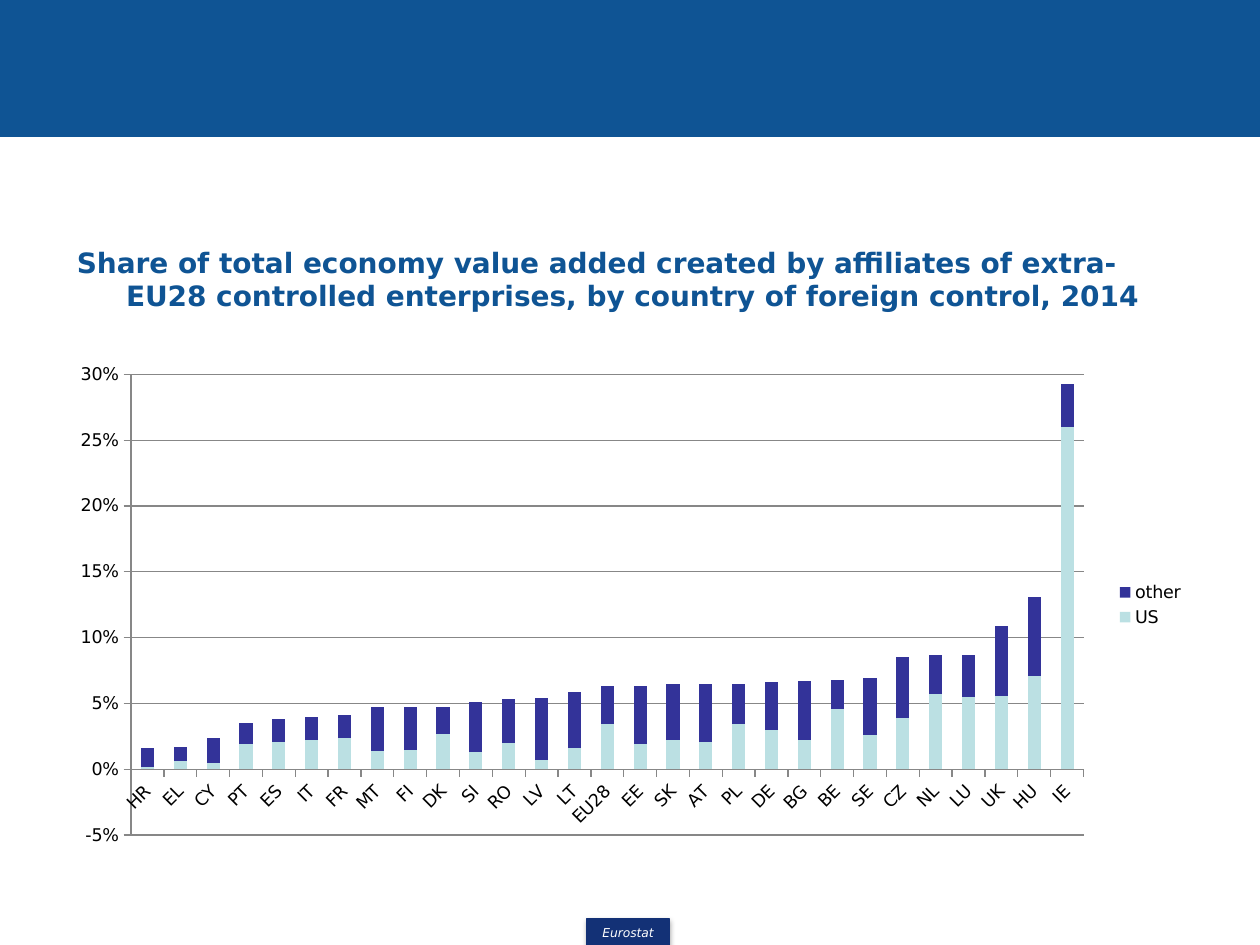
from lxml.etree import SubElement
from pptx import Presentation
from pptx.chart.data import CategoryChartData
from pptx.dml.color import RGBColor
from pptx.enum.chart import XL_CHART_TYPE, XL_LEGEND_POSITION, XL_TICK_MARK
from pptx.enum.shapes import MSO_SHAPE
from pptx.enum.text import MSO_ANCHOR, MSO_AUTO_SIZE, PP_ALIGN
from pptx.oxml import parse_xml
from pptx.oxml.ns import nsdecls, qn
from pptx.util import Inches, Pt

BLUE = RGBColor(0x0F, 0x54, 0x94)
NAVY = RGBColor(0x13, 0x31, 0x76)
PALE = RGBColor(0xBB, 0xE0, 0xE3)
INDIGO = RGBColor(0x33, 0x33, 0x99)
GREY = RGBColor(0x87, 0x87, 0x87)
BLACK = RGBColor(0, 0, 0)
WHITE = RGBColor(0xFF, 0xFF, 0xFF)

TITLE = ("Share of total economy value added created by affiliates of extra-EU28 "
         "controlled enterprises, by country of foreign control, 2014")
# Country: (share of US affiliates, share of other extra-EU28 affiliates), in percent
SHARES = {
    "HR": (0.2, 1.4), "EL": (0.6, 1.1), "CY": (0.5, 1.9), "PT": (1.9, 1.6),
    "ES": (2.1, 1.7), "IT": (2.2, 1.8), "FR": (2.4, 1.7), "MT": (1.4, 3.3),
    "FI": (1.5, 3.2), "DK": (2.7, 2.0), "SI": (1.3, 3.8), "RO": (2.0, 3.3),
    "LV": (0.7, 4.7), "LT": (1.6, 4.3), "EU28": (3.4, 2.9), "EE": (1.9, 4.4),
    "SK": (2.2, 4.3), "AT": (2.1, 4.4), "PL": (3.4, 3.1), "DE": (3.0, 3.6),
    "BG": (2.2, 4.5), "BE": (4.6, 2.2), "SE": (2.6, 4.3), "CZ": (3.9, 4.6),
    "NL": (5.7, 3.0), "LU": (5.5, 3.2), "UK": (5.6, 5.3), "HU": (7.1, 6.0),
    "IE": (26.0, 3.3),
}


class Deck:
    """Holds the style and the current slide; boxes are shares of the slide's size."""
    font_name = "DejaVu Sans"

    def __init__(self, width, height):
        self.prs = Presentation()
        self.prs.slide_width, self.prs.slide_height = Inches(width), Inches(height)
        self.s = self.prs.slides.add_slide(self.prs.slide_layouts[5])

    def box(self, x, y, w, h):
        sw, sh = self.prs.slide_width, self.prs.slide_height
        return int(x * sw), int(y * sh), int(w * sw), int(h * sh)

    def style(self, font, size, color, bold=False, italic=False):
        font.name, font.size = self.font_name, Pt(size)
        font.bold, font.italic = bold, italic
        font.color.rgb = color

    def rect(self, color, *share):
        sp = self.s.shapes.add_shape(MSO_SHAPE.RECTANGLE, *self.box(*share))
        sp.shadow.inherit = False
        sp.fill.solid()
        sp.fill.fore_color.rgb = color
        sp.line.color.rgb = color
        sp.line.width = Pt(0.75)
        return sp

    def label(self, text, color, *share):
        """Filled box with a soft shadow below and a small centred caption."""
        sp = self.rect(color, *share)
        effects = sp._element.spPr.find(qn("a:effectLst"))
        effects.append(parse_xml(
            f'<a:outerShdw {nsdecls("a")} blurRad="{Pt(3.1)}" dist="{Pt(1.8)}" '
            'dir="5400000" rotWithShape="0"><a:srgbClr val="000000">'
            '<a:alpha val="35000"/></a:srgbClr></a:outerShdw>'))
        tf = sp.text_frame
        tf.text = text
        tf.vertical_anchor = MSO_ANCHOR.MIDDLE
        tf.margin_left = tf.margin_right = tf.margin_top = tf.margin_bottom = 0
        p = tf.paragraphs[0]
        p.alignment = PP_ALIGN.CENTER
        self.style(p.runs[0].font, 7, WHITE, italic=True)

    def title(self, text, *share):
        sp = self.s.shapes.title
        sp.left, sp.top, sp.width, sp.height = self.box(*share)
        tf = sp.text_frame
        tf.text = text
        tf.word_wrap = True
        tf.auto_size = MSO_AUTO_SIZE.NONE
        tf.vertical_anchor = MSO_ANCHOR.MIDDLE
        p = tf.paragraphs[0]
        p.alignment = PP_ALIGN.LEFT
        hang = Inches(0.39)
        pPr = p._p.get_or_add_pPr()
        pPr.set("marL", str(hang))
        pPr.set("indent", str(-hang))
        self.style(p.runs[0].font, 16, BLUE, bold=True)

    def stacked_columns(self, shares, colors, *share):
        data = CategoryChartData(number_format="0.0%")
        data.categories = list(shares)
        for name, values in zip(colors, zip(*shares.values())):
            data.add_series(name, [round(v / 100, 3) for v in values])
        chart = self.s.shapes.add_chart(
            XL_CHART_TYPE.COLUMN_STACKED, *self.box(*share), data).chart
        self.style(chart.font, 10, BLACK)
        chart.has_title = False
        chart.has_legend = True
        chart.legend.position = XL_LEGEND_POSITION.RIGHT
        chart.legend.include_in_layout = False

        plot = chart.plots[0]
        plot.gap_width, plot.overlap = 150, 100
        plot.vary_by_categories = False
        for series, color in zip(plot.series, colors.values()):
            series.format.fill.solid()
            series.format.fill.fore_color.rgb = color

        cat, val = chart.category_axis, chart.value_axis
        val.minimum_scale, val.maximum_scale, val.major_unit = -0.05, 0.3, 0.05
        val.has_major_gridlines = True
        val.tick_labels.number_format = "0%"
        val.tick_labels.number_format_is_linked = False
        for axis in (cat, val):
            axis.major_tick_mark = XL_TICK_MARK.OUTSIDE
            self.style(axis.tick_labels.font, 10, BLACK)
        for line in (cat.format.line, val.format.line, val.major_gridlines.format.line):
            line.color.rgb = GREY
            line.width = Pt(0.75)
        cat._element.find(qn("c:txPr")).find(qn("a:bodyPr")).set("rot", "-2700000")
        self.place_plot(chart, x=0.06, y=0.04, w=0.84, h=0.92)

    def place_plot(self, chart, **shares):
        area = chart._chartSpace.chart.plotArea
        layout = area.find(qn("c:layout"))
        if layout is None:
            layout = parse_xml(f'<c:layout {nsdecls("c")}/>')
            area.insert(0, layout)
        manual = SubElement(layout, qn("c:manualLayout"))
        settings = {"layoutTarget": "inner", "xMode": "edge", "yMode": "edge", **shares}
        for tag, value in settings.items():
            SubElement(manual, qn(f"c:{tag}")).set("val", str(value))


def main():
    deck = Deck(10, 7.5)
    deck.rect(BLUE, 0, 0, 1, 0.144)
    deck.label("Eurostat", NAVY, 0.466, 0.972, 0.065, 0.029)
    deck.title(TITLE, 0.051, 0.227, 0.9, 0.136)
    deck.stacked_columns(SHARES, {"US": PALE, "other": INDIGO}, 0.05, 0.375, 0.9, 0.53)
    deck.prs.save("out.pptx")


if __name__ == "__main__":
    main()
